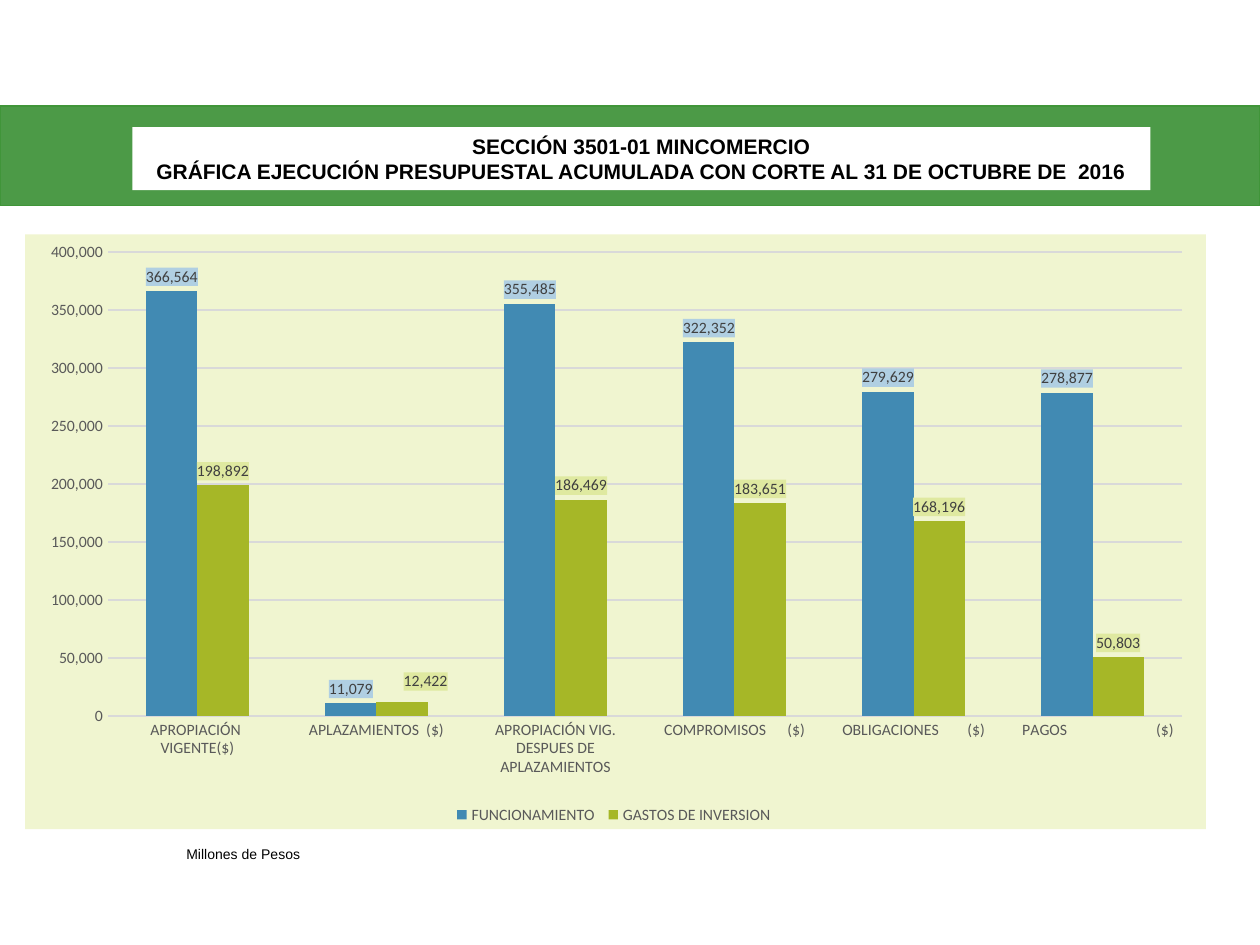
from copy import deepcopy
from dataclasses import dataclass

from lxml.etree import SubElement
from pptx import Presentation
from pptx.chart.data import CategoryChartData
from pptx.dml.color import RGBColor
from pptx.enum.chart import XL_CHART_TYPE, XL_LABEL_POSITION, XL_LEGEND_POSITION, XL_TICK_MARK
from pptx.enum.shapes import MSO_SHAPE
from pptx.enum.text import MSO_ANCHOR, PP_ALIGN
from pptx.oxml import parse_xml
from pptx.oxml.ns import nsdecls, qn
from pptx.util import Inches, Pt

# Content
TITLE = ["SECCIÓN 3501-01 MINCOMERCIO",
         "GRÁFICA EJECUCIÓN PRESUPUESTAL ACUMULADA CON CORTE AL 31 DE OCTUBRE DE  2016"]
UNIT_NOTE = ["Millones de Pesos"]
CATEGORIES = ["APROPIACIÓN  VIGENTE($)", "APLAZAMIENTOS  ($)",
              "APROPIACIÓN VIG. DESPUES DE APLAZAMIENTOS", "COMPROMISOS      ($)",
              "OBLIGACIONES        ($)", "   PAGOS                         ($)"]
SERIES = [
    ("FUNCIONAMIENTO ", [366564, 11079, 355485, 322352, 279629, 278877]),
    ("GASTOS DE INVERSION ", [198892, 12422, 186469, 183651, 168196, 50803]),
]
NUMBER_FORMAT = "#,##0"


@dataclass(frozen=True)
class Theme:
    text_font: str = "Arial"
    chart_font: str = "Calibri"
    title_size: int = 12
    note_size: int = 8
    chart_size: int = 9
    black: str = "000000"
    white: str = "FFFFFF"
    band: str = "4C9A47"
    band_line: str = "409539"
    panel: str = "F0F5D0"
    grid: str = "D9D9D9"
    axis_text: str = "595959"
    label_text: str = "404040"
    bars: tuple = ("418AB3", "A6B727")
    label_fills: tuple = ("B0CFE2", "DFE9A0")


THEME = Theme()

# Layout in inches: left, top, width, height
BAND = (0, 0.84, 10, 0.79)
TITLE_BOX = (1.05, 1.01, 8.08, 0.5)
CHART_BOX = (0.2, 1.86, 9.37, 4.72)
NOTE_BOX = (1.38, 6.66, 1.65, 0.24)
# Shares of the chart's size
PLOT_AREA = {"x": 0.07, "y": 0.03, "w": 0.91, "h": 0.78}
LABEL_SHIFT = {"x": 0.02, "y": -0.01}


def inches(box):
    return [Inches(length) for length in box]


def set_font(font, name, size, color, bold=False):
    font.name, font.size, font.bold = name, Pt(size), bold
    font.color.rgb = RGBColor.from_string(color)


def write_text(shape, lines, *, size, bold=False, align=PP_ALIGN.LEFT, wrap=True):
    frame = shape.text_frame
    frame.text = "\n".join(lines)
    frame.word_wrap = wrap
    frame.vertical_anchor = MSO_ANCHOR.MIDDLE
    for paragraph in frame.paragraphs:
        paragraph.alignment = align
        set_font(paragraph.font, THEME.text_font, size, THEME.black, bold)


def paint(shape, color):
    shape.fill.solid()
    shape.fill.fore_color.rgb = RGBColor.from_string(color)


def chart_fill(color):
    return parse_xml(
        f'<c:spPr {nsdecls("c", "a")}><a:solidFill><a:srgbClr val="{color}"/></a:solidFill>'
        '<a:ln><a:noFill/></a:ln></c:spPr>')


def chart_layout(shares, inner=False):
    layout = parse_xml(f'<c:layout {nsdecls("c")}><c:manualLayout/></c:layout>')
    settings = {"layoutTarget": "inner", "xMode": "edge", "yMode": "edge"} if inner else {}
    for tag, value in {**settings, **shares}.items():
        SubElement(layout[0], qn(f"c:{tag}")).set("val", str(value))
    return layout


def format_axis(axis):
    axis.major_tick_mark = axis.minor_tick_mark = XL_TICK_MARK.NONE
    axis.format.line.fill.background()
    set_font(axis.tick_labels.font, THEME.chart_font, THEME.chart_size, THEME.axis_text)


def format_series(series, color, label_fill):
    paint(series.format, color)
    series.invert_if_negative = False
    labels = series.data_labels
    labels.show_value = True
    labels.number_format, labels.number_format_is_linked = NUMBER_FORMAT, False
    labels.position = XL_LABEL_POSITION.OUTSIDE_END
    set_font(labels.font, THEME.chart_font, THEME.chart_size, THEME.label_text)
    labels._element.find(qn("c:txPr")).addprevious(chart_fill(label_fill))


def shift_label(series, index, shift):
    """Move one value label while keeping the series' label format."""
    series.points[index].data_label.position = XL_LABEL_POSITION.OUTSIDE_END
    labels = series.data_labels._element
    label = labels.find(qn("c:dLbl"))
    for tag in ("c:spPr", "c:txPr"):
        for old in label.findall(qn(tag)):
            label.remove(old)
    position = label.find(qn("c:dLblPos"))
    position.addprevious(chart_layout(shift))
    for tag in ("c:numFmt", "c:spPr", "c:txPr"):
        position.addprevious(deepcopy(labels.find(qn(tag))))


def add_budget_chart(slide):
    data = CategoryChartData(number_format=NUMBER_FORMAT)
    data.categories = CATEGORIES
    for name, values in SERIES:
        data.add_series(name, values)
    chart = slide.shapes.add_chart(
        XL_CHART_TYPE.COLUMN_CLUSTERED, *inches(CHART_BOX), data).chart
    chart.has_title = False
    set_font(chart.font, THEME.chart_font, 10, THEME.black)
    chart._chartSpace.find(qn("c:txPr")).addprevious(chart_fill(THEME.panel))

    # Plot area and bars
    plot_area = chart._chartSpace.chart.plotArea
    for old in plot_area.findall(qn("c:layout")):
        plot_area.remove(old)
    plot_area.insert(0, chart_layout(PLOT_AREA, inner=True))
    plot = chart.plots[0]
    plot.gap_width, plot.overlap, plot.vary_by_categories = 150, 0, False
    for series, color, label_fill in zip(plot.series, THEME.bars, THEME.label_fills):
        format_series(series, color, label_fill)
    shift_label(plot.series[1], 1, LABEL_SHIFT)

    # Axes and legend
    format_axis(chart.category_axis)
    value_axis = chart.value_axis
    format_axis(value_axis)
    value_axis.minimum_scale, value_axis.maximum_scale = 0, 400000
    value_axis.major_unit = 50000
    value_axis.tick_labels.number_format = NUMBER_FORMAT
    value_axis.tick_labels.number_format_is_linked = False
    grid_line = value_axis.major_gridlines.format.line
    grid_line.width = Pt(0.75)
    grid_line.color.rgb = RGBColor.from_string(THEME.grid)
    chart.has_legend = True
    chart.legend.position = XL_LEGEND_POSITION.BOTTOM
    chart.legend.include_in_layout = False
    set_font(chart.legend.font, THEME.chart_font, THEME.chart_size, THEME.axis_text)


def main():
    presentation = Presentation()
    presentation.slide_width, presentation.slide_height = Inches(10), Inches(7.5)
    slide = presentation.slides.add_slide(presentation.slide_layouts[5])

    # Green band, kept behind the title
    band = slide.shapes.add_shape(MSO_SHAPE.RECTANGLE, *inches(BAND))
    band.shadow.inherit = False
    paint(band, THEME.band)
    band.line.color.rgb = RGBColor.from_string(THEME.band_line)
    band.line.width = Pt(1)
    title = slide.shapes.title
    title._element.addprevious(band._element)

    # Title
    title.left, title.top, title.width, title.height = inches(TITLE_BOX)
    paint(title, THEME.white)
    write_text(title, TITLE, size=THEME.title_size, bold=True,
               align=PP_ALIGN.CENTER, wrap=False)

    # Chart and unit note
    add_budget_chart(slide)
    note = slide.shapes.add_textbox(*inches(NOTE_BOX))
    write_text(note, UNIT_NOTE, size=THEME.note_size)

    presentation.save("out.pptx")


if __name__ == "__main__":
    main()
